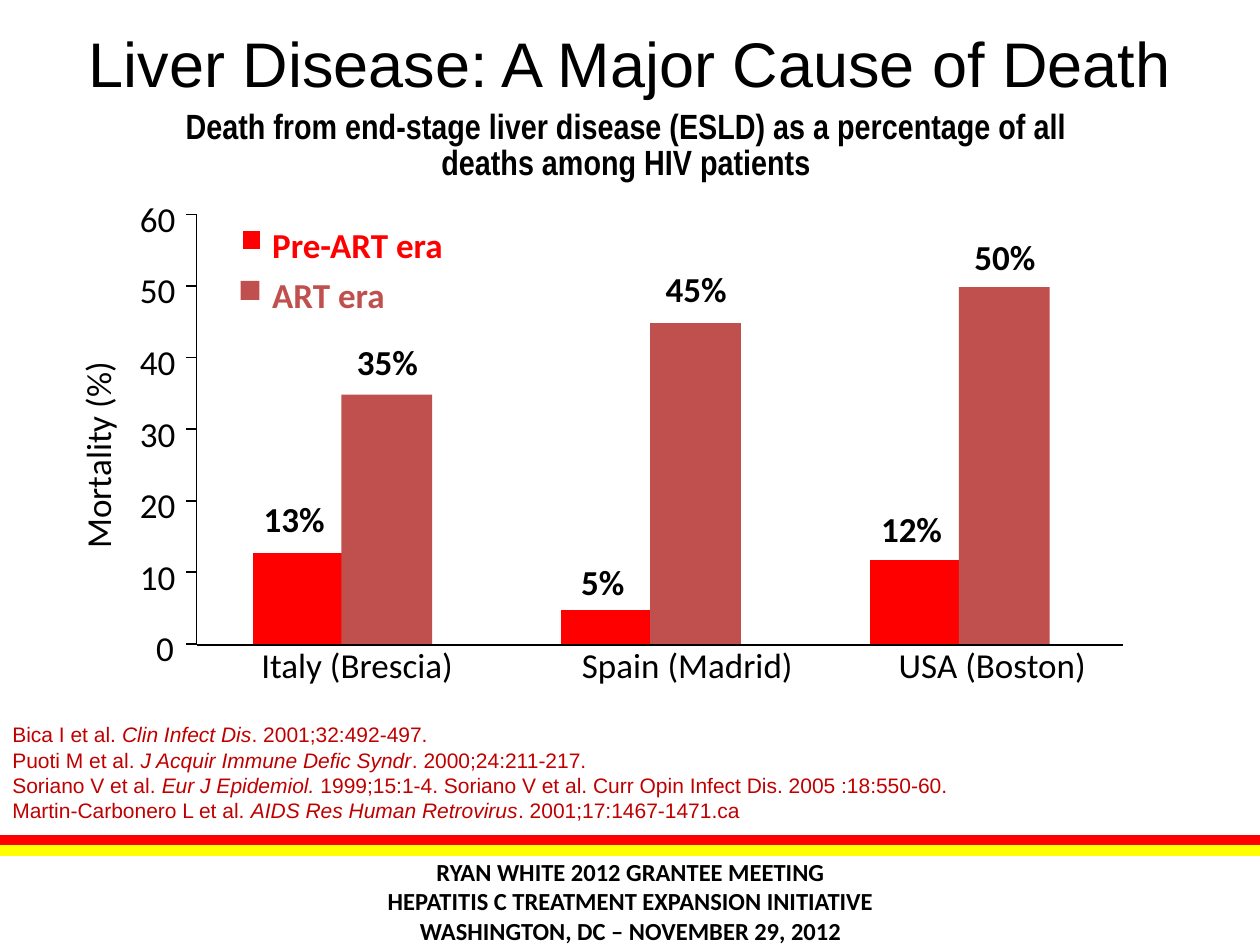
"""Build a slide on liver disease as a cause of death, with a bar graph drawn on a grid."""
from typing import NamedTuple, Optional

from lxml.etree import SubElement
from pptx import Presentation
from pptx.dml.color import RGBColor
from pptx.enum.shapes import MSO_CONNECTOR as Link, MSO_SHAPE as Form
from pptx.enum.text import MSO_ANCHOR as Anchor, MSO_AUTO_SIZE as Fit, PP_ALIGN as Align
from pptx.oxml.ns import qn
from pptx.util import Inches, Pt

COLS, ROWS = 100, 75
WIDE, TALL = Inches(10), Inches(7.5)
BLACK, WHITE, RED, BRICK, WINE, YELLOW = (
    "000000", "FFFFFF", "FF0000", "C0504D", "C00000", "FFFF00")
AXIS, TOP, BASE, STEP = 15.6, 17, 51.2, 5.68
FIRST, PITCH, BAR = 20, 24.5, 7.2
BREAK = "\n"


class Box(NamedTuple):
    """A place on the grid in columns and rows."""
    col: float
    row: float
    wide: float
    high: float


class Style(NamedTuple):
    """The look of a text."""
    size: float = 20
    font: str = "Calibri"
    hue: str = BLACK
    bold: bool = False


class Run(NamedTuple):
    """A piece of text, slanted or not."""
    text: str
    slant: bool = False


class Site(NamedTuple):
    """A study site: its name box, two death rates and the rows of their labels."""
    name: str
    col: float
    wide: float
    rates: tuple[int, int]
    rows: tuple[float, float]


class Era(NamedTuple):
    """A series: its name, colours, bar shift, label shift and legend place."""
    name: str
    hue: str
    edge: Optional[str]
    shift: float
    nudge: float
    key: Box
    label: Box


SITES = [
    Site("Italy (Brescia)", 17.5, 21.7, (13, 35), (39, 26.5)),
    Site("Spain (Madrid)", 43.3, 22.5, (5, 45), (44, 20.7)),
    Site("USA (Boston)", 67.5, 22.5, (12, 50), (39.8, 18.2)),
]
ERAS = [
    Era("Pre-ART era", RED, WHITE, 0, -0.7,
        Box(19.2, 18.3, 1.5, 1.5), Box(21.6, 17.7, 16.2, 3.4)),
    Era("ART era", BRICK, None, 7.1, -0.4,
        Box(19.1, 22.3, 1.5, 1.5), Box(21.6, 21.7, 10.8, 3.4)),
]
CITES = [
    [Run("Bica I et al. "), Run("Clin Infect Dis", True), Run(". 2001;32:492-497.")],
    [Run("Puoti M et al. "), Run("J Acquir Immune Defic Syndr", True),
     Run(". 2000;24:211-217."), Run(BREAK), Run("Soriano V et al. "),
     Run("Eur J Epidemiol.", True),
     Run(" 1999;15:1-4. Soriano V et al. Curr Opin Infect Dis. 2005 :18:550-60.")],
    [Run("Martin-Carbonero L et al. "), Run("AIDS Res Human Retrovirus", True),
     Run(". 2001;17:1467-1471.ca")],
]
HEAD = ["Death from end-stage liver disease (ESLD) as a percentage of all ",
        "deaths among HIV patients "]
FOOT = ["RYAN WHITE 2012 GRANTEE MEETING",
        "HEPATITIS C TREATMENT EXPANSION INITIATIVE",
        "WASHINGTON, DC – NOVEMBER 29, 2012"]


def paint(code: str) -> RGBColor:
    """Turn a hex string into a colour."""
    return RGBColor.from_string(code)


def across(col: float) -> int:
    """Turn columns into a length."""
    return int(WIDE * col / COLS)


def down(row: float) -> int:
    """Turn rows into a length."""
    return int(TALL * row / ROWS)


def spot(box: Box) -> tuple[int, int, int, int]:
    """Turn a grid place into left, top, width and height."""
    return across(box.col), down(box.row), across(box.wide), down(box.high)


def fill_text(frame, paras: list, style: Style, align: Align,
              space: Optional[float] = None) -> None:
    """Write paragraphs run by run."""
    for i, runs in enumerate(paras):
        para = frame.paragraphs[0] if i == 0 else frame.add_paragraph()
        para.alignment = align
        if space:
            para.line_spacing = space
        for piece in [Run(runs)] if isinstance(runs, str) else runs:
            if piece.text == BREAK:
                para.add_line_break()
                continue
            run = para.add_run()
            run.text = piece.text
            font = run.font
            font.size, font.name = Pt(style.size), style.font
            font.bold, font.italic = style.bold, piece.slant
            font.color.rgb = paint(style.hue)


def write(slide, box: Box, paras: list, style: Style, align: Align = Align.CENTER,
          space: Optional[float] = None, tight: bool = False, turn: float = 0) -> None:
    """Add a text box, either wrapped or tight around one line."""
    shape = slide.shapes.add_textbox(*spot(box))
    shape.rotation = turn
    frame = shape.text_frame
    frame.word_wrap, frame.auto_size = not tight, Fit.SHAPE_TO_FIT_TEXT
    if tight:
        frame.margin_left = frame.margin_right = 0
        frame.margin_top = frame.margin_bottom = 0
    fill_text(frame, paras, style, align, space)


def block(slide, box: Box, hue: str, edge: Optional[str]) -> None:
    """Add a filled rectangle."""
    shape = slide.shapes.add_shape(Form.RECTANGLE, *spot(box))
    shape.shadow.inherit = False
    shape.fill.solid()
    shape.fill.fore_color.rgb = paint(hue)
    if edge:
        shape.line.color.rgb, shape.line.width = paint(edge), Pt(0.75)
    else:
        shape.line.fill.background()


def rule(slide, box: Box, hue: str = BLACK, width: float = 1) -> None:
    """Add a straight line across a grid place."""
    left, top, wide, high = spot(box)
    line = slide.shapes.add_connector(Link.STRAIGHT, left, top, left + wide, top + high)
    line.line.color.rgb, line.line.width = paint(hue), Pt(width)
    SubElement(line._element.spPr, qn("a:effectLst"))


def draw_frame(slide) -> None:
    """Add the footer, title, heading and sources."""
    write(slide, Box(-1.8, 67.5, 103.7, 8.1), FOOT, Style(14, bold=True))
    for row, hue in ((66.7, RED), (67.5, YELLOW)):
        rule(slide, Box(0, row, COLS, 0), hue, 6)
    title = slide.shapes.title
    title.left, title.top, title.width, title.height = spot(Box(0, 0, COLS, 9.9))
    title.text_frame.vertical_anchor = Anchor.MIDDLE
    fill_text(title.text_frame, ["Liver Disease: A Major Cause of Death"],
              Style(36, "Arial"), Align.CENTER)
    write(slide, Box(0, 56.8, COLS, 9.1), CITES, Style(12, "Arial", WINE), Align.LEFT)
    write(slide, Box(0, 8.3, COLS, 9.6), HEAD, Style(20, "Arial Narrow", bold=True),
          space=0.85)


def draw_graph(slide) -> None:
    """Add the bars, labels, legend and axes."""
    bold = Style(bold=True)
    for k, era in enumerate(ERAS):
        for i, site in enumerate(SITES):
            rate, col = site.rates[k], FIRST + i * PITCH + era.shift
            high = rate * STEP / 10
            block(slide, Box(col, BASE - high, BAR, high), era.hue, era.edge)
            write(slide, Box(col + era.nudge, site.rows[k], 8.1, 4.4), [f"{rate}%"], bold)
        block(slide, era.key, era.hue, era.edge)
        write(slide, era.label, [era.name], Style(hue=era.hue, bold=True),
              Align.LEFT, tight=True)
    for site in SITES:
        write(slide, Box(site.col, 50.6, site.wide, 4.4), [site.name], Style())
    rule(slide, Box(AXIS, TOP, 0, BASE - TOP))
    for n in range(7):
        row = BASE - 0.1 - n * STEP
        rule(slide, Box(AXIS - 0.8, row, 0.8, 0))
        col, wide = (11.1, 3.1) if n else (12.4, 1.6)
        write(slide, Box(col, row - 1.35, wide, 3.4), [str(n * 10)], Style(),
              Align.LEFT, tight=True)
    write(slide, Box(-0.1, 34, 15.7, 3.4), ["Mortality (%)"], Style(), Align.LEFT,
          tight=True, turn=270)
    rule(slide, Box(AXIS, BASE, 3 * PITCH, 0))


def main() -> None:
    """Make the deck and save it."""
    deck = Presentation()
    deck.slide_width, deck.slide_height = WIDE, TALL
    slide = deck.slides.add_slide(deck.slide_layouts[5])
    draw_frame(slide)
    draw_graph(slide)
    deck.save("out.pptx")


if __name__ == "__main__":
    main()
